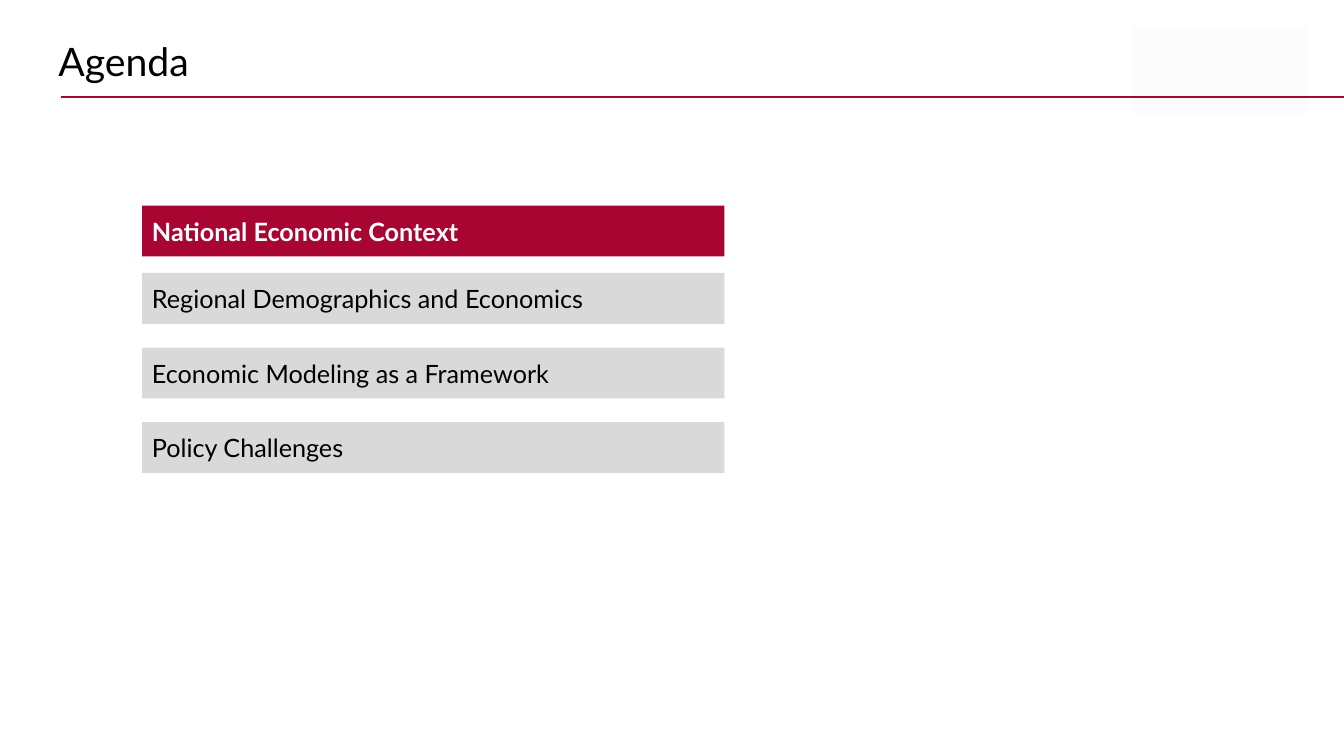
import pptx
import pptx.dml.color
import pptx.enum.shapes
import pptx.enum.text
import pptx.util
from pptx.dml.color import RGBColor
from pptx.util import Cm

CRIMSON = RGBColor(0xA8, 0x05, 0x32)
GREY = RGBColor(0xD9, 0xD9, 0xD9)
PALE = RGBColor(0xFC, 0xFC, 0xFC)
WHITE = RGBColor(0xFF, 0xFF, 0xFF)
BLACK = RGBColor(0x00, 0x00, 0x00)
FONT = "Lato"

CURRENT_TOPIC = "National Economic Context"
NEXT_TOPICS = [
    "Regional Demographics and Economics",
    "Economic Modeling as a Framework",
    "Policy Challenges",
]
CURRENT_TOP = 5.18
NEXT_TOP = 6.88
NEXT_PITCH = 1.88


def write_text(frame, text, size, color, bold=False):
    frame.text = text
    frame.word_wrap = True
    frame.vertical_anchor = pptx.enum.text.MSO_ANCHOR.MIDDLE
    para = frame.paragraphs[0]
    para.alignment = pptx.enum.text.PP_ALIGN.LEFT
    font = para.runs[0].font
    font.name = FONT
    font.size = pptx.util.Pt(size)
    font.bold = bold
    font.color.rgb = color


def add_block(page, left, top, width, height, fill):
    block = page.shapes.add_shape(
        pptx.enum.shapes.MSO_SHAPE.RECTANGLE,
        Cm(left), Cm(top), Cm(width), Cm(height))
    block.shadow.inherit = False
    block.fill.solid()
    block.fill.fore_color.rgb = fill
    block.line.fill.background()
    return block


def add_topic(page, top, text, current=False):
    bar = add_block(page, 3.58, top, 14.68, 1.28, CRIMSON if current else GREY)
    write_text(bar.text_frame, text, 18, WHITE if current else BLACK, current)


def add_rule(page):
    rule = page.shapes.add_connector(
        pptx.enum.shapes.MSO_CONNECTOR.STRAIGHT,
        Cm(1.53), Cm(2.44), Cm(33.87), Cm(2.44))
    rule.line.color.rgb = CRIMSON
    rule.line.width = pptx.util.Pt(1.5)
    properties = rule.element.spPr
    properties.append(properties.makeelement(pptx.oxml.ns.qn("a:effectLst"), {}))


def place_title(page, text):
    title = page.shapes.title
    title.left, title.top = Cm(1.22), Cm(0.81)
    title.width, title.height = Cm(25.86), Cm(1.45)
    write_text(title.text_frame, text, 28, BLACK)


def main():
    deck = pptx.Presentation()
    deck.slide_width, deck.slide_height = Cm(33.87), Cm(19.05)
    page = deck.slides.add_slide(deck.slide_layouts.get_by_name("Title Only"))

    # Header
    add_block(page, 28.55, 0.69, 4.39, 2.18, PALE)
    add_rule(page)
    place_title(page, "Agenda")

    # Agenda topics
    add_topic(page, CURRENT_TOP, CURRENT_TOPIC, current=True)
    for index, topic in enumerate(NEXT_TOPICS):
        add_topic(page, NEXT_TOP + index * NEXT_PITCH, topic)

    deck.save("out.pptx")


if __name__ == "__main__":
    main()
